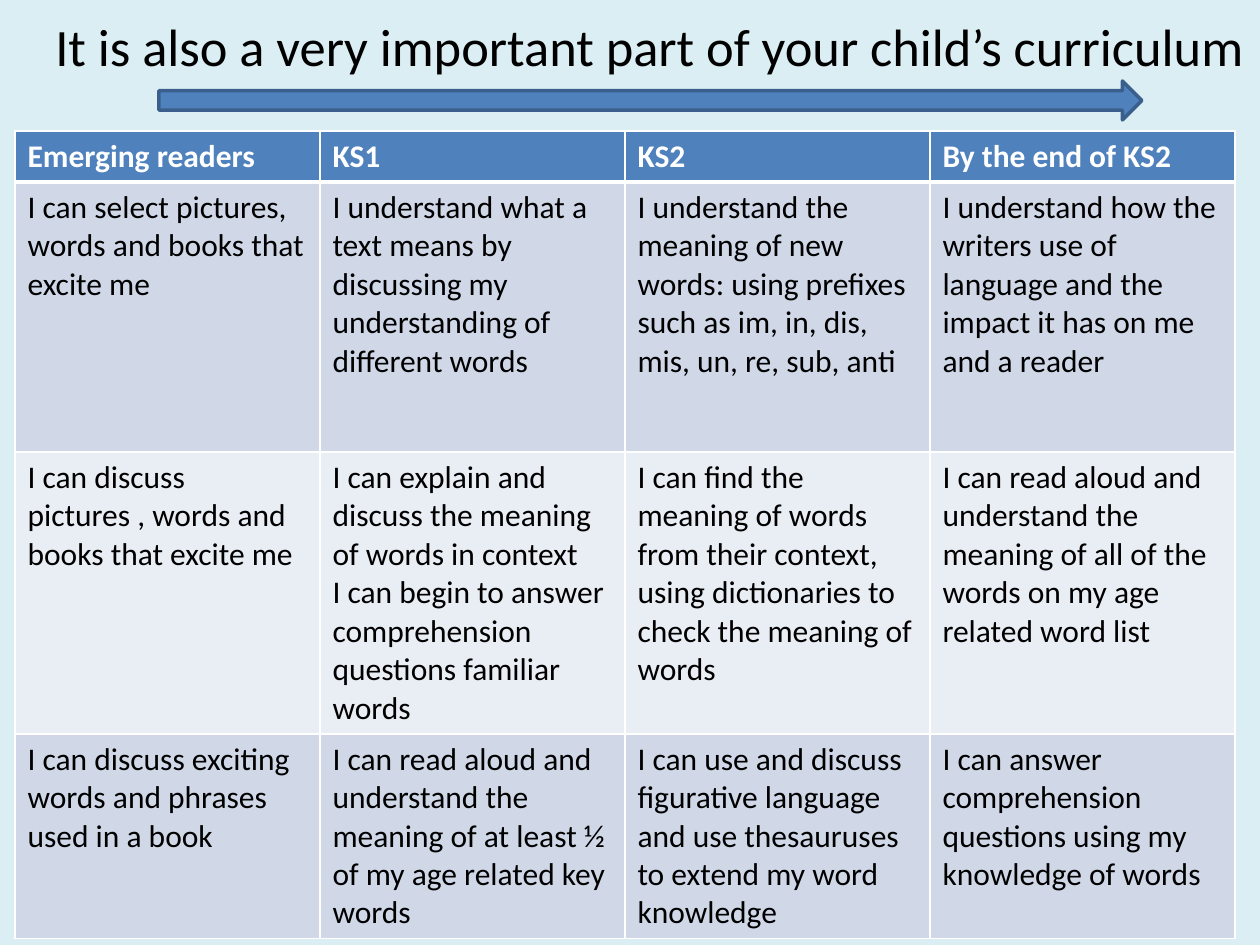
from lxml.etree import SubElement
from pptx import Presentation
from pptx.dml.color import RGBColor
from pptx.enum.shapes import MSO_SHAPE as SHAPE
from pptx.enum.text import MSO_ANCHOR as ANCHOR, PP_ALIGN as ALIGN
from pptx.oxml.ns import qn
from pptx.util import Emu, Pt

EMU_PER_PX = 914400 // 126
BACKGROUND, BLUE, BLUE_EDGE = "DBEEF4", "4F81BD", "3A5F8C"
BANDS = ("D0D8E8", "E9EDF4")
WHITE, BLACK = "FFFFFF", "000000"

TITLE = "It is also a very important part of your child’s curriculum"
STAGES = ["Emerging readers", "KS1", "KS2", "By the end of KS2"]
SKILLS = [
    ["I can select pictures, words and books that excite me",
     "I understand what a text means by discussing my understanding of different words",
     "I understand the meaning of new words: using prefixes such as im, in, dis, mis, un, re, sub, anti",
     "I understand how the writers use of language and the impact it has on me and a reader"],
    ["I can discuss pictures , words and books that excite me",
     "I can explain and discuss the meaning of words in context\n"
     "I can begin to answer comprehension questions familiar words",
     "I can find the meaning of words from their context, using dictionaries to check the meaning of words",
     "I can read aloud and understand the meaning of all of the words on my age related word list"],
    ["I can discuss exciting words and phrases used in a book",
     "I can read aloud and understand the meaning of at least ½ of my age related key words",
     "I can use and discuss figurative language and use thesauruses to extend my word knowledge",
     "I can answer comprehension questions using my knowledge of words"],
]
ROW_HEIGHTS = [49, 270, 233, 186]


def px(length):
    return Emu(length * EMU_PER_PX)


def rgb(color):
    return RGBColor.from_string(color)


def paint(fill, color):
    fill.solid()
    fill.fore_color.rgb = rgb(color)


def write(frame, text, size=18, color=BLACK, bold=False, align=ALIGN.LEFT):
    frame.text = text
    frame.word_wrap = True
    for paragraph in frame.paragraphs:
        paragraph.alignment = align
        for run in paragraph.runs:
            font = run.font
            font.name, font.size, font.bold = "Calibri", Pt(size), bold
            font.color.rgb = rgb(color)


def add_borders(cell, color, **widths):
    """Draw the cell edges; the schema wants lines ahead of the fill."""
    properties = cell._tc.get_or_add_tcPr()
    for position, (side, width) in enumerate(widths.items()):
        line = SubElement(properties, qn(f"a:ln{side}"), w=str(Pt(width)))
        fill = SubElement(line, qn("a:solidFill"))
        SubElement(fill, qn("a:srgbClr"), val=color)
        properties.insert(position, line)


def place_title(slide, left, top, width, height):
    title = slide.shapes.title
    title.left, title.top, title.width, title.height = map(px, (left, top, width, height))
    title.text_frame.vertical_anchor = ANCHOR.MIDDLE
    write(title.text_frame, TITLE, size=30, align=ALIGN.CENTER)


def add_skills_table(slide, left, top, width, height):
    rows = [STAGES] + SKILLS
    frame = slide.shapes.add_table(len(rows), len(STAGES), *map(px, (left, top, width, height)))
    table = frame.table
    for column in table.columns:
        column.width = px(width // len(STAGES))
    for r, texts in enumerate(rows):
        table.rows[r].height = px(ROW_HEIGHTS[r])
        header = r == 0
        for c, text in enumerate(texts):
            cell = table.cell(r, c)
            write(cell.text_frame, text, color=WHITE if header else BLACK, bold=header)
            paint(cell.fill, BLUE if header else BANDS[(r - 1) % 2])
            # A thick rule parts the header from the first band
            add_borders(cell, WHITE, L=1, R=1, T=3 if r == 1 else 1, B=3 if header else 1)
    frame.height = px(height)


def add_progress_arrow(slide, left, top, width, height):
    arrow = slide.shapes.add_shape(SHAPE.RIGHT_ARROW, *map(px, (left, top, width, height)))
    arrow.shadow.inherit = False
    paint(arrow.fill, BLUE)
    arrow.line.color.rgb = rgb(BLUE_EDGE)
    arrow.line.width = Pt(2)


def main():
    deck = Presentation()
    deck.slide_width, deck.slide_height = px(1260), px(945)
    slide = deck.slides.add_slide(deck.slide_layouts[5])
    paint(slide.background.fill, BACKGROUND)
    place_title(slide, 20, -33, 1260, 158)
    add_skills_table(slide, 15, 131, 1220, 799)
    add_progress_arrow(slide, 159, 81, 983, 39)
    deck.save("out.pptx")


if __name__ == "__main__":
    main()
